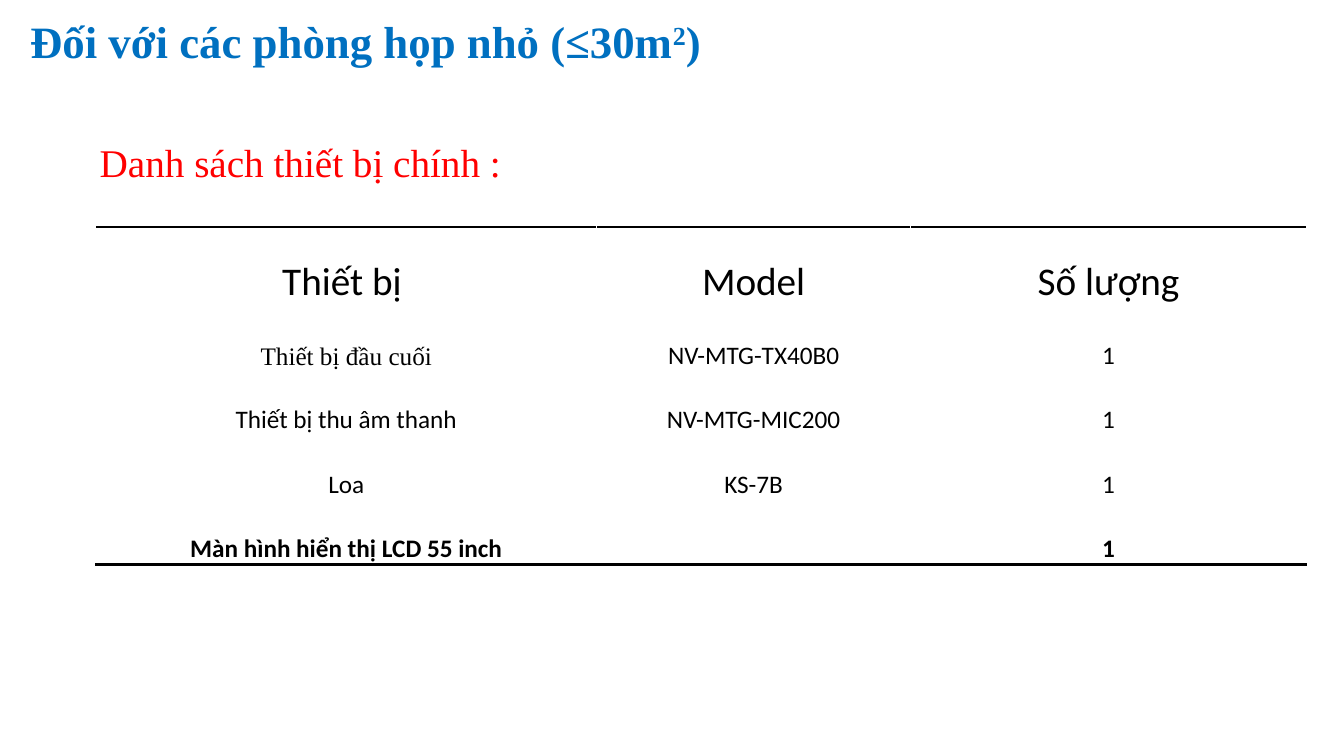
from pptx import Presentation
from pptx.dml.color import RGBColor
from pptx.enum.text import MSO_ANCHOR, PP_ALIGN
from pptx.oxml import parse_xml
from pptx.oxml.ns import nsdecls
from pptx.util import Inches, Pt

SERIF, SANS = "Times New Roman", "Calibri"
BLACK, WHITE, BLUE, RED = "000000", "FFFFFF", "0070C0", "FF0000"

TITLE = ["Đối với các phòng họp nhỏ (≤30m", "2", ")"]
LABEL = "Danh sách thiết bị chính :"
ROWS = [
    ("Thiết bị ", "Model", "Số lượng"),
    ("Thiết bị đầu cuối", "NV-MTG-TX40B0", "1"),
    ("Thiết bị thu âm thanh", "NV-MTG-MIC200", "1"),
    ("Loa", "KS-7B", "1"),
    ("Màn hình hiển thị LCD 55 inch", "", "1"),
]
WIDTHS = (4.97, 3.11, 3.93)
HEAD, BODY = 0.79, 0.64
LAST = len(ROWS) - 1


def color(code):
    return RGBColor.from_string(code)


def style(font, name, size, code, bold=False):
    font.name, font.size, font.bold = name, Pt(size), bold
    font.color.rgb = color(code)


def add_text(slide, box, parts, size, code, bold=False):
    shape = slide.shapes.add_textbox(*map(Inches, box))
    frame = shape.text_frame
    frame.word_wrap = True
    para = frame.paragraphs[0]
    for part in parts:
        run = para.add_run()
        run.text = part
        style(run.font, SERIF, size, code, bold)
    return frame


def rule(cell, side):
    """Draw a 2 pt black border on side T or B of the cell."""
    line = parse_xml(
        f'<a:ln{side} {nsdecls("a")} w="{Pt(2)}"><a:solidFill>'
        f'<a:srgbClr val="{BLACK}"/></a:solidFill></a:ln{side}>')
    cell._tc.get_or_add_tcPr().insert(0, line)


def fill_cell(cell, text, row, col):
    cell.fill.solid()
    cell.fill.fore_color.rgb = color(WHITE)
    cell.margin_left = cell.margin_right = cell.margin_top = Inches(0.01)
    cell.margin_bottom = 0
    cell.vertical_anchor = MSO_ANCHOR.BOTTOM
    cell.text_frame.text = text
    para = cell.text_frame.paragraphs[0]
    para.alignment = PP_ALIGN.CENTER
    name = SERIF if (row, col) == (1, 0) else SANS
    for run in para.runs:
        style(run.font, name, 18 if row else 28, BLACK, row == LAST)
    if row == 0:
        rule(cell, "T")
    if row == LAST:
        rule(cell, "B")


def add_grid(slide):
    height = HEAD + BODY * LAST
    box = (0.95, 2.25, sum(WIDTHS), height)
    table = slide.shapes.add_table(
        len(ROWS), len(WIDTHS), *map(Inches, box)).table
    table.first_row = table.horz_banding = False
    for col, width in enumerate(WIDTHS):
        table.columns[col].width = Inches(width)
    for row, texts in enumerate(ROWS):
        table.rows[row].height = Inches(BODY if row else HEAD)
        for col, text in enumerate(texts):
            fill_cell(table.cell(row, col), text, row, col)


def main():
    deck = Presentation()
    deck.slide_width, deck.slide_height = Inches(13.33), Inches(7.5)
    slide = deck.slides.add_slide(deck.slide_layouts[6])

    title = add_text(slide, (0.2, -0.08, 8.23, 1.04), TITLE, 32, BLUE, True)
    title.vertical_anchor = MSO_ANCHOR.MIDDLE
    para = title.paragraphs[0]
    para.line_spacing = 0.9
    para.runs[1]._r.get_or_add_rPr().set("baseline", "30000")

    add_grid(slide)
    add_text(slide, (0.89, 1.32, 5.35, 0.57), [LABEL], 28, RED)
    deck.save("out.pptx")


if __name__ == "__main__":
    main()
